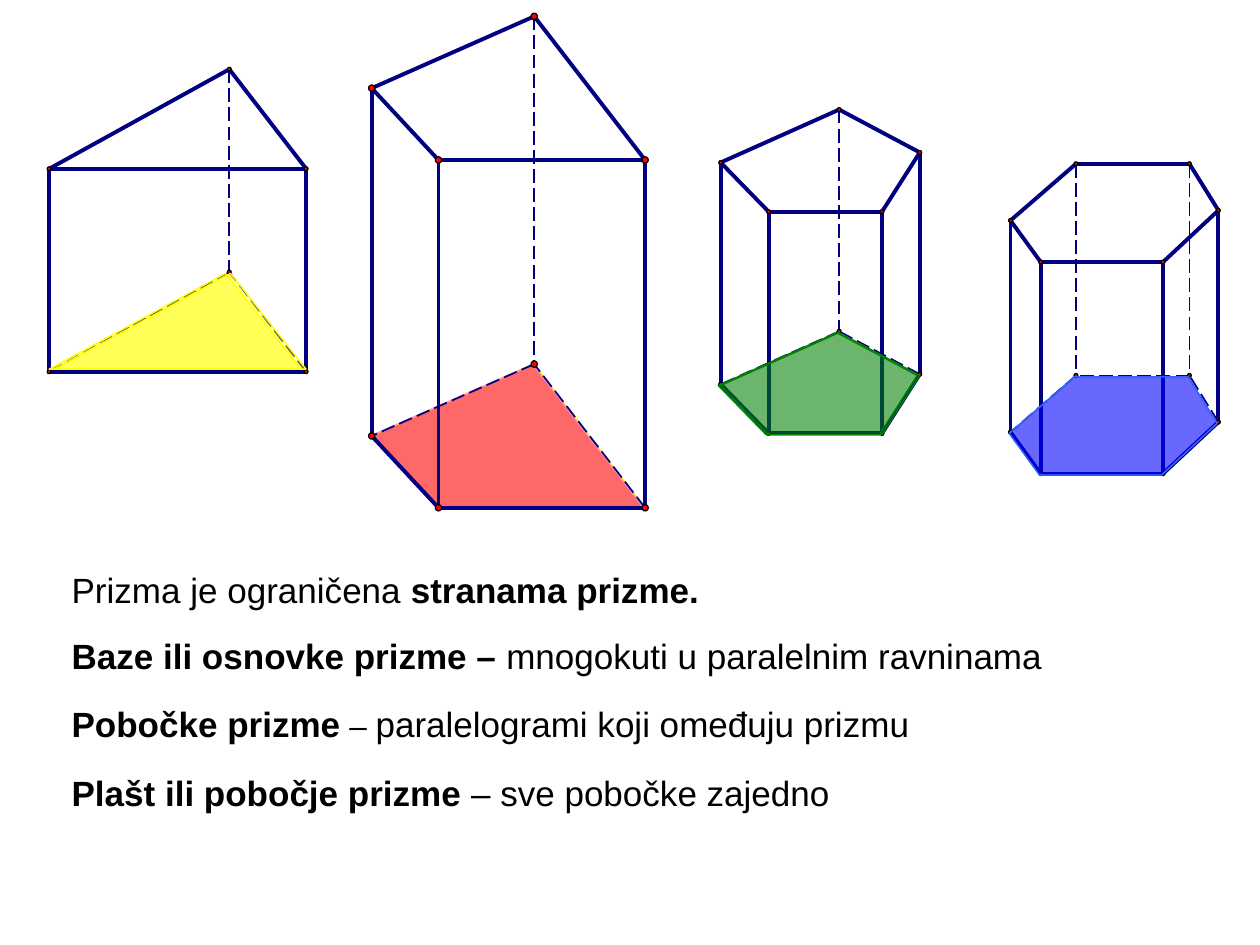
from lxml import etree
from pptx import Presentation
from pptx import util as u
from pptx.dml.color import RGBColor
from pptx.enum import dml, shapes, text
from pptx.oxml.ns import qn

COLORS = {"edge": "000080", "dot": "FF0000", "dot_line": "000000", "text": "000000",
          "yellow": "FFFF00", "red": "FF0000", "pink": "FF99CC",
          "green": "008000", "blue": "0000FF", "sky": "3366FF"}
SOLID = {"width": u.Pt(2.25)}
DASHED = {"width": u.Pt(1), "dash_style": dml.MSO_LINE.LONG_DASH}
FONT = {"name": "Arial", "size": u.Pt(20)}


class Deck:
    """Holds the style and the current slide."""

    def __init__(self, prs):
        self.slide = prs.slides.add_slide(prs.slide_layouts[6])

    def rgb(self, name):
        return RGBColor.from_string(COLORS[name])

    def format(self, obj, values):
        for name, value in values.items():
            setattr(obj, name, value)

    def paint(self, sp, fill, line):
        sp.shadow.inherit = False
        sp.fill.solid()
        sp.fill.fore_color.rgb = self.rgb(fill)
        sp.line.color.rgb = self.rgb(line)
        sp.line.width = 0

    def edge(self, parent, start, end, hidden):
        ends = [u.Inches(v) for v in (*start, *end)]
        line = parent.add_connector(shapes.MSO_CONNECTOR.STRAIGHT, *ends)
        line.line.color.rgb = self.rgb("edge")
        self.format(line.line, DASHED if hidden else SOLID)
        etree.SubElement(line._element.spPr, qn("a:effectLst"))

    def dot(self, parent, center, size):
        x, y = (u.Inches(v - size / 2) for v in center)
        sp = parent.add_shape(shapes.MSO_SHAPE.OVAL, x, y, u.Inches(size), u.Inches(size))
        self.paint(sp, "dot", "dot_line")

    def base(self, points, fill, line, opacity):
        points = [(u.Inches(x), u.Inches(y)) for x, y in points]
        builder = self.slide.shapes.build_freeform(*points[0])
        builder.add_line_segments(points[1:], close=True)
        sp = builder.convert_to_shape()
        self.paint(sp, fill, line)
        color = sp._element.spPr.find(qn("a:solidFill"))[0]
        etree.SubElement(color, qn("a:alpha"), val=str(opacity * 1000))

    def frame(self, parent, top, bottom, hidden, dot_size):
        count = len(top)
        for i in range(count):
            j = (i + 1) % count
            self.edge(parent, bottom[i], bottom[j], bool({i, j} & hidden))
            self.edge(parent, top[i], top[j], False)
            self.edge(parent, top[i], bottom[i], i in hidden)
        for point in top + bottom:
            self.dot(parent, point, dot_size)

    def prism(self, top, height, hidden, fill, opacity, layers,
              base=None, base_behind=False, dot_size=0.03):
        bottom = [(x, y + height) for x, y in top]

        def draw_base():
            for dx, dy, line in layers:
                points = [(x + dx, y + dy) for x, y in base or bottom]
                self.base(points, fill, line, opacity)

        if base_behind:
            draw_base()
            self.frame(self.slide.shapes, top, bottom, hidden, dot_size)
        else:
            group = self.slide.shapes.add_group_shape()
            self.frame(group.shapes, top, bottom, hidden, dot_size)
            draw_base()

    def text(self, top, width, runs):
        sp = self.slide.shapes.add_textbox(*map(u.Inches, (0.47, top, width, 0.43)))
        tf = sp.text_frame
        self.format(tf, {"word_wrap": True,
                         "auto_size": text.MSO_AUTO_SIZE.SHAPE_TO_FIT_TEXT})
        p = tf.paragraphs[0]
        for words, values in runs:
            r = p.add_run()
            r.text = words
            self.format(r.font, {**FONT, **values})
            r.font.color.rgb = self.rgb("text")


PRISMS = [
    # Triangular
    dict(top=[(0.39, 1.34), (2.43, 1.34), (1.82, 0.55)], height=1.61, hidden={2},
         fill="yellow", opacity=41, layers=[(0, 0, "yellow"), (0.04, 0, "yellow")],
         base=[(0.39, 2.93), (2.39, 2.93), (1.79, 2.17)]),
    # Quadrilateral
    dict(top=[(3.48, 1.27), (5.12, 1.27), (4.24, 0.13), (2.95, 0.7)], height=2.76,
         hidden={2}, fill="red", opacity=36,
         layers=[(0, 0, "yellow"), (-0.01, 0, "pink")], base_behind=True, dot_size=0.05),
    # Pentagonal
    dict(top=[(6.1, 1.68), (7, 1.68), (7.3, 1.21), (6.66, 0.87), (5.72, 1.29)],
         height=1.76, hidden={3}, fill="green", opacity=35,
         layers=[(0, 0.01, "green"), (-0.02, 0.01, "green")]),
    # Hexagonal
    dict(top=[(8.26, 2.08), (9.23, 2.08), (9.67, 1.67), (9.44, 1.3), (8.54, 1.3),
              (8.02, 1.75)],
         height=1.68, hidden={3, 4}, fill="blue", opacity=36,
         layers=[(-0.01, 0.01, "sky")] * 2),
]

BOLD, PLAIN = {"bold": True}, {"bold": False}
LINES = [
    (4.46, 7.09, [("Prizma je ograničena ", PLAIN), ("stranama prizme.", BOLD)]),
    (4.99, 9.25, [("Baze ili osnovke prizme – ", BOLD),
                  ("mnogokuti u paralelnim ravninama", PLAIN)]),
    (5.53, 8.43, [("Pobočke prizme", BOLD), (" – ", {"bold": False, "size": u.Pt(18)}),
                  ("paralelogrami koji omeđuju prizmu", PLAIN)]),
    (6.07, 7.01, [("Plašt ili pobočje prizme", BOLD), (" – sve pobočke zajedno", PLAIN)]),
]


def main():
    prs = Presentation()
    prs.slide_width, prs.slide_height = u.Inches(10), u.Inches(7.5)
    deck = Deck(prs)
    # Prisms
    for prism in PRISMS:
        deck.prism(**prism)
    # Definitions
    for line in LINES:
        deck.text(*line)
    prs.save("out.pptx")


if __name__ == "__main__":
    main()
